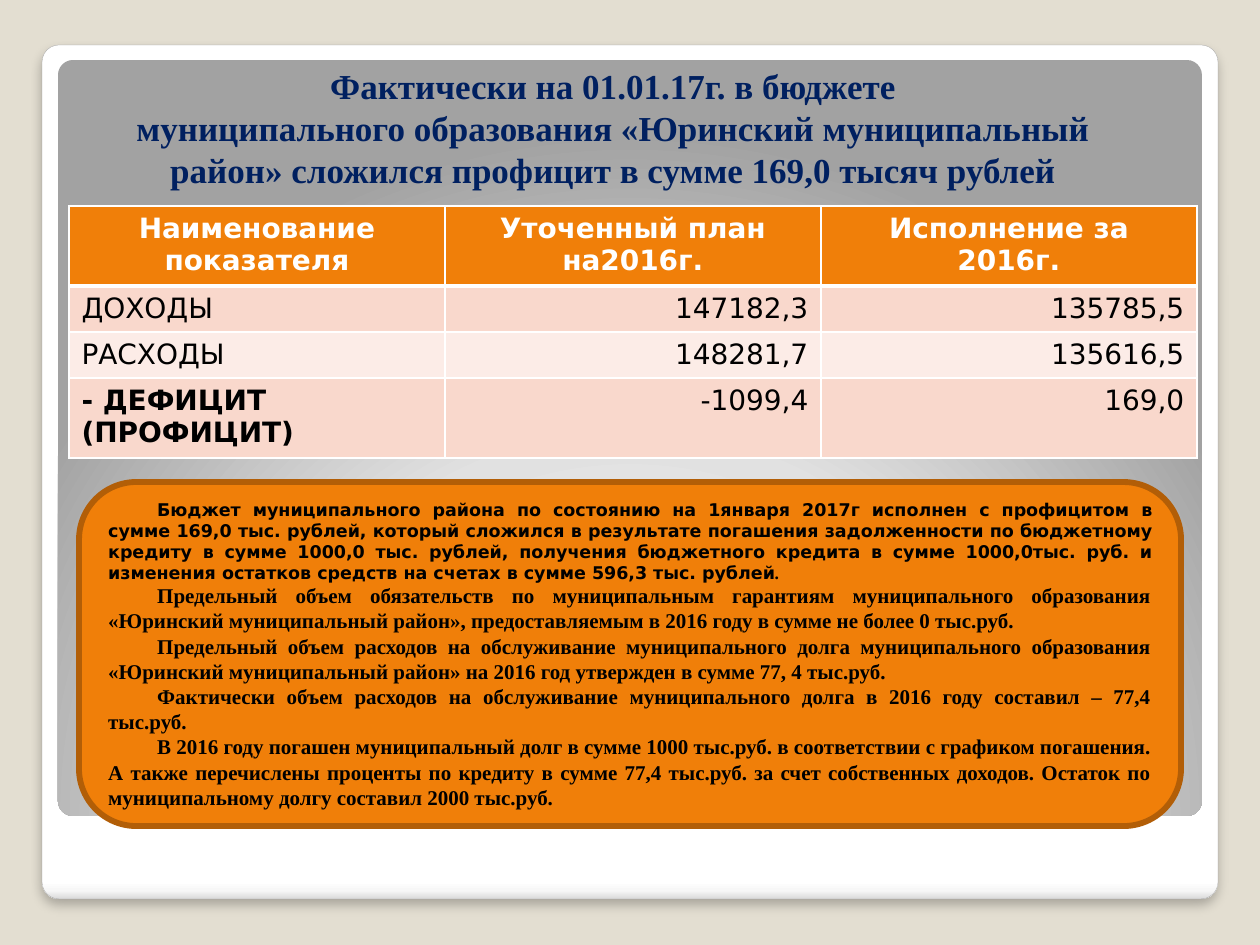
from pptx import Presentation
from pptx.dml.color import RGBColor
from pptx.enum.shapes import MSO_SHAPE
from pptx.enum.text import MSO_ANCHOR, MSO_AUTO_SIZE, PP_ALIGN
from pptx.oxml import parse_xml
from pptx.oxml.ns import nsdecls, qn
from pptx.util import Emu, Pt

ROUNDED = MSO_SHAPE.ROUNDED_RECTANGLE
LEFT, CENTER, RIGHT, JUSTIFY = PP_ALIGN.LEFT, PP_ALIGN.CENTER, PP_ALIGN.RIGHT, PP_ALIGN.JUSTIFY
BOTTOM, MIDDLE = MSO_ANCHOR.BOTTOM, MSO_ANCHOR.MIDDLE
NO_AUTOFIT = MSO_AUTO_SIZE.NONE

EMU_PER_PX = 914400 / 126
SANS = "DejaVu Sans"
SERIF = "Times New Roman"

SAND = RGBColor(0xE3, 0xDE, 0xD1)
GRAY = RGBColor(0xA4, 0xA4, 0xA4)
NAVY = RGBColor(0x00, 0x20, 0x60)
ORANGE = RGBColor(0xF0, 0x7F, 0x09)
BROWN = RGBColor(0xB2, 0x5E, 0x07)
PEACH = RGBColor(0xF9, 0xD8, 0xCC)
PALE = RGBColor(0xFC, 0xEC, 0xE7)
WHITE = RGBColor(0xFF, 0xFF, 0xFF)
BLACK = RGBColor(0x00, 0x00, 0x00)

FRAME_STOPS = [(0, "FFFFFF"), (98, "FFFFFF"), (99, "F7F7F7"), (100, "DADADA")]
FRAME_SHADE = '<a:lin ang="5400000" scaled="0"/>'
PANEL_STOPS = [(0, "FFFFFF"), (55, "E1E1E1"), (100, "A2A2A2")]
PANEL_SHADE = ('<a:path path="circle">'
               '<a:fillToRect l="50000" t="175000" r="50000" b="-75000"/></a:path>')

TITLE = ("Фактически на 01.01.17г. в бюджете\vмуниципального образования «Юринский "
         "муниципальный район» сложился профицит в сумме 169,0 тысяч рублей")
BUDGET_ROWS = [
    ("Наименование показателя", "Уточенный план на2016г.", "Исполнение за 2016г."),
    ("ДОХОДЫ", "147182,3", "135785,5"),
    ("РАСХОДЫ", "148281,7", "135616,5"),
    ("- ДЕФИЦИТ\n(ПРОФИЦИТ)", "-1099,4", "169,0"),
]
ROW_HEIGHTS = [80, 46, 46, 80]
ROW_FILLS = [ORANGE, PEACH, PALE, PEACH]
SUMMARY = (
    "Бюджет муниципального района по состоянию на 1января 2017г исполнен с профицитом "
    "в сумме 169,0 тыс. рублей, который сложился в результате погашения задолженности по "
    "бюджетному кредиту в сумме 1000,0 тыс. рублей, получения бюджетного кредита в сумме "
    "1000,0тыс. руб. и изменения остатков средств на счетах в сумме 596,3 тыс. рублей")
DEBT_NOTES = [
    "Предельный объем обязательств по муниципальным гарантиям муниципального образования "
    "«Юринский муниципальный район», предоставляемым в 2016 году в сумме не более 0 тыс.руб.",
    "Предельный объем расходов на обслуживание муниципального долга муниципального образования "
    "«Юринский муниципальный район» на 2016 год утвержден в сумме 77, 4 тыс.руб.",
    "Фактически объем расходов на обслуживание муниципального долга в 2016 году составил – "
    "77,4 тыс.руб.",
    "В 2016 году погашен муниципальный долг в сумме 1000 тыс.руб. в соответствии с графиком "
    "погашения. А также перечислены проценты по кредиту в сумме 77,4 тыс.руб. за счет "
    "собственных доходов. Остаток по муниципальному долгу составил 2000 тыс.руб.",
]


def px(length):
    """Convert whole pixels to EMU."""
    return Emu(round(length * EMU_PER_PX))


def write(para, text, size=16, font=SANS, color=BLACK, bold=False, align=LEFT, indent=0):
    """Append formatted text to a paragraph, with a line break at each vertical tab."""
    para.alignment = align
    if indent:
        properties = para._p.get_or_add_pPr()
        properties.set("marL", "0")
        properties.set("indent", str(px(indent)))
    for number, line in enumerate(text.split("\v")):
        if number:
            para.add_line_break()
        span = para.add_run()
        span.text = line
        span.font.size = Pt(size)
        span.font.name = font
        span.font.bold = bold
        span.font.color.rgb = color


def add_rounded(page, left, top, width, height, radius=None):
    """Add a rounded rectangle without shadow or outline."""
    box = page.shapes.add_shape(ROUNDED, px(left), px(top), px(width), px(height))
    box.shadow.inherit = False
    box.line.fill.background()
    if radius is not None:
        box.adjustments[0] = radius
    return box


def fill_gradient(box, stops, shade):
    """Fill a shape with the given gradient stops and direction."""
    marks = "".join(f'<a:gs pos="{place * 1000}"><a:srgbClr val="{color}"/></a:gs>'
                    for place, color in stops)
    box.fill.gradient()
    properties = box.element.spPr
    properties.replace(properties.find(qn("a:gradFill")), parse_xml(
        f'<a:gradFill {nsdecls("a")} rotWithShape="1"><a:gsLst>{marks}</a:gsLst>{shade}</a:gradFill>'))


def add_backdrop(page):
    """Add the white frame with its shadow and the gray panel."""
    frame = add_rounded(page, 42, 45, 1176, 854, radius=0.02)
    fill_gradient(frame, FRAME_STOPS, FRAME_SHADE)
    frame.line.color.rgb = GRAY
    frame.line.width = Pt(0.16)
    frame.element.spPr.find(qn("a:effectLst")).append(parse_xml(
        f'<a:outerShdw {nsdecls("a")} blurRad="{Pt(6)}" dist="{Pt(4)}" dir="5400000" '
        'algn="t" rotWithShape="0"><a:srgbClr val="000000"><a:alpha val="25000"/>'
        '</a:srgbClr></a:outerShdw>'))
    panel = add_rounded(page, 58, 60, 1144, 756, radius=0.02)
    fill_gradient(panel, PANEL_STOPS, PANEL_SHADE)
    return frame, panel


def place_title(page, backdrop):
    """Move and fill the title placeholder in front of the backdrop."""
    title = page.shapes.title
    title.left, title.top, title.width, title.height = px(98), px(49), px(1030), px(148)
    for shape in backdrop:
        title.element.addprevious(shape.element)
    frame = title.text_frame
    frame.word_wrap = True
    frame.auto_size = NO_AUTOFIT
    frame.vertical_anchor = BOTTOM
    write(frame.paragraphs[0], TITLE, size=20, font=SERIF, color=NAVY, bold=True, align=CENTER)


def set_borders(cell, **widths):
    """Give a cell white borders of the given point widths."""
    properties = cell._tc.get_or_add_tcPr()
    for side, width in widths.items():
        properties.append(parse_xml(
            f'<a:ln{side} {nsdecls("a")} w="{Pt(width)}"><a:solidFill>'
            f'<a:srgbClr val="{WHITE}"/></a:solidFill></a:ln{side}>'))


def add_budget_table(page):
    """Add the table of plan and execution figures."""
    table = page.shapes.add_table(
        len(BUDGET_ROWS), 3, px(69), px(206), px(1128), px(sum(ROW_HEIGHTS))).table
    for row, texts in enumerate(BUDGET_ROWS):
        table.rows[row].height = px(ROW_HEIGHTS[row])
        header = row == 0
        for column, text in enumerate(texts):
            cell = table.cell(row, column)
            set_borders(cell, L=1, R=1, T=3 if row == 1 else 1, B=3 if header else 1)
            cell.fill.solid()
            cell.fill.fore_color.rgb = ROW_FILLS[row]
            total_label = row == len(BUDGET_ROWS) - 1 and column == 0
            align = CENTER if header else RIGHT if column else LEFT
            for number, line in enumerate(text.split("\n")):
                frame = cell.text_frame
                para = frame.add_paragraph() if number else frame.paragraphs[0]
                write(para, line, color=WHITE if header else BLACK,
                      bold=header or total_label, align=align)


def add_debt_box(page):
    """Add the orange box with the budget summary and the debt notes."""
    box = add_rounded(page, 79, 482, 1102, 344)
    box.fill.solid()
    box.fill.fore_color.rgb = ORANGE
    box.line.color.rgb = BROWN
    box.line.width = Pt(3.35)
    frame = box.text_frame
    frame.word_wrap = True
    frame.vertical_anchor = MIDDLE
    style = {"bold": True, "align": JUSTIFY, "indent": 49}
    write(frame.paragraphs[0], SUMMARY, size=10, **style)
    write(frame.paragraphs[0], ".", size=10, font=SERIF, **style)
    for note in DEBT_NOTES:
        write(frame.add_paragraph(), note, size=12, font=SERIF, **style)


def main():
    """Build the budget slide and save it."""
    deck = Presentation()
    deck.slide_width, deck.slide_height = px(1260), px(945)
    page = deck.slides.add_slide(deck.slide_layouts[5])
    page.background.fill.solid()
    page.background.fill.fore_color.rgb = SAND
    place_title(page, add_backdrop(page))
    add_budget_table(page)
    add_debt_box(page)
    deck.save("out.pptx")


if __name__ == "__main__":
    main()
